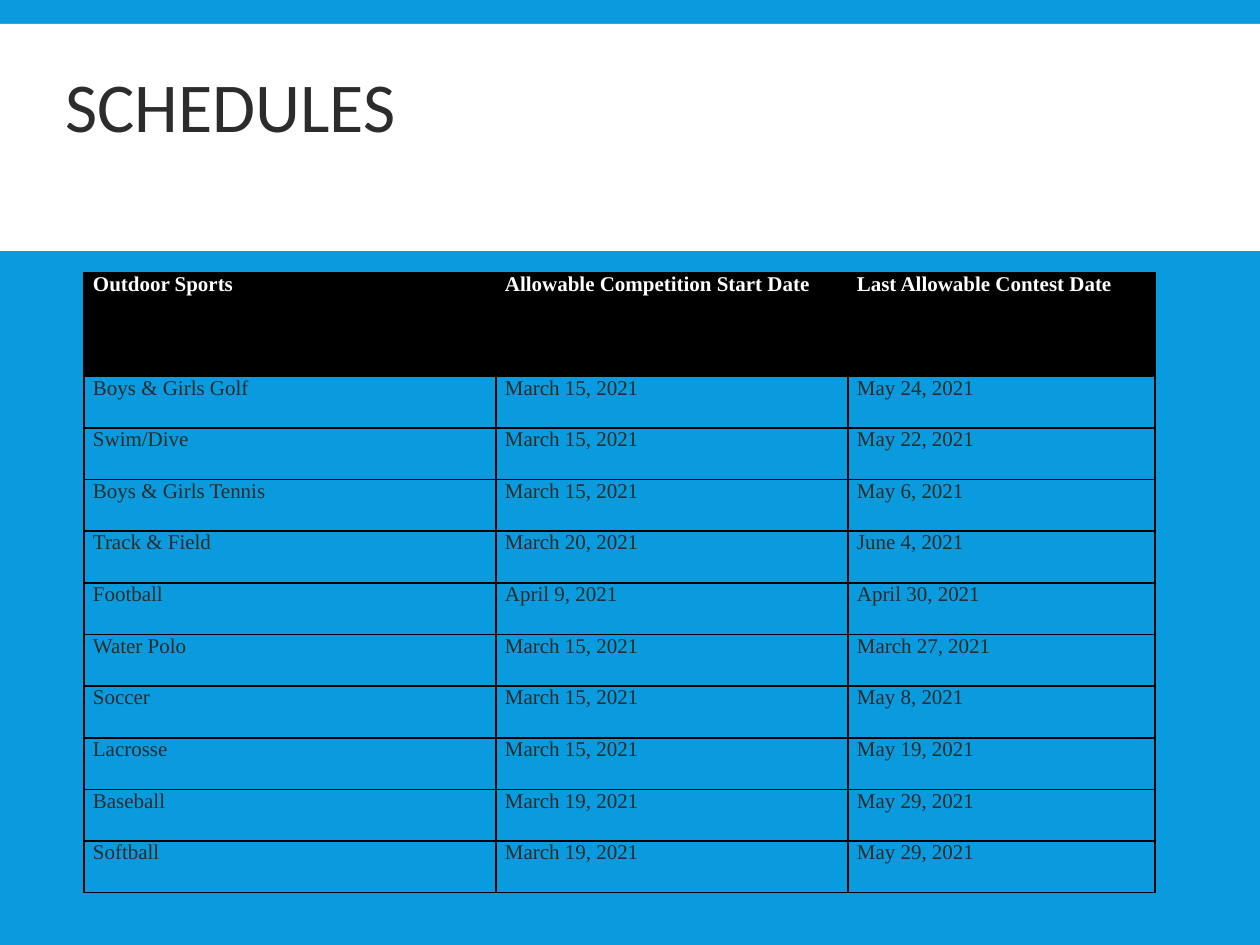
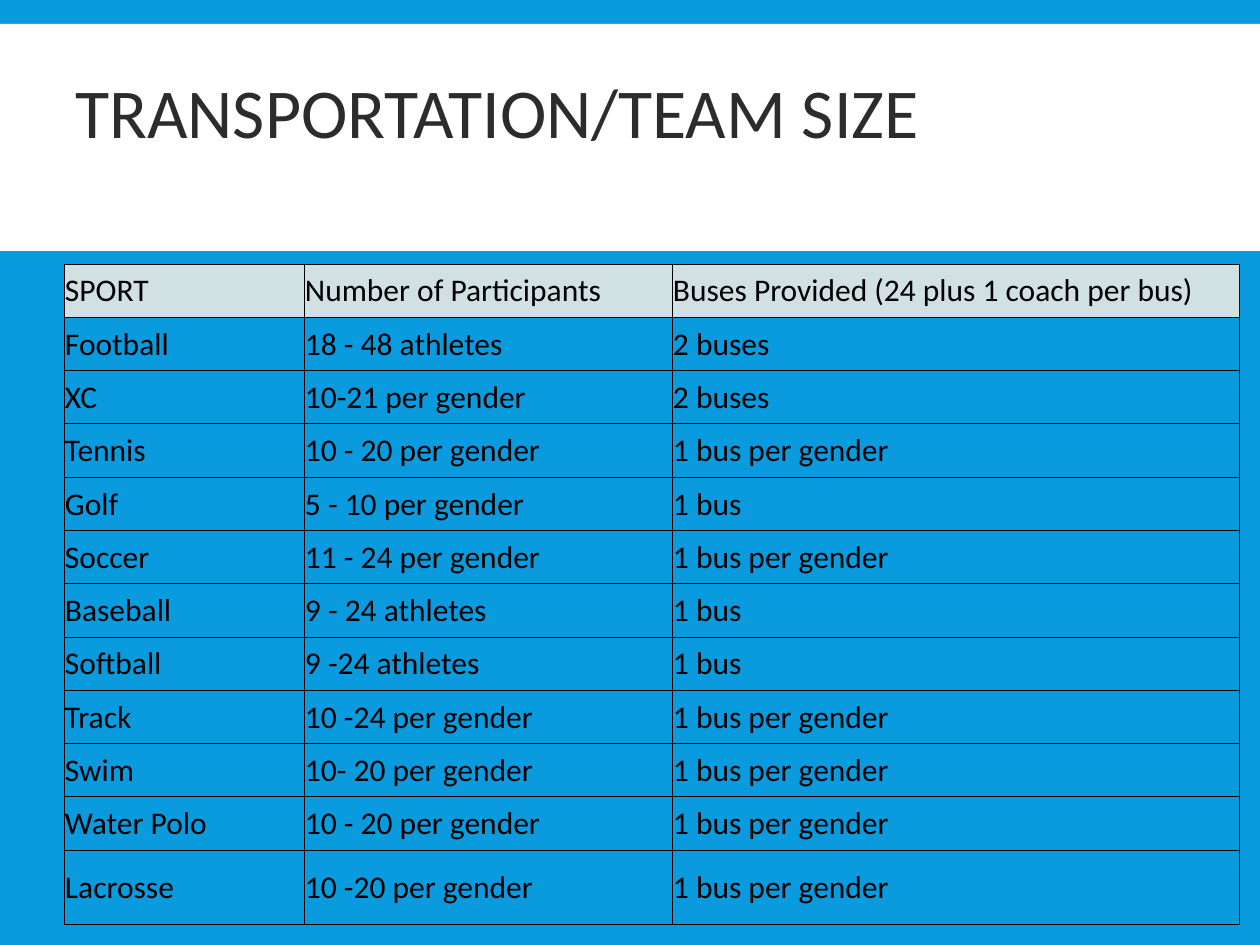
"""Build two slides on sports schedules and team transportation."""
from lxml import etree
from pptx import Presentation, util as u
from pptx.dml.color import RGBColor
from pptx.enum import shapes, text
from pptx.oxml.ns import qn

HUES = {"sky": "099BDD", "white": "FFFFFF", "ink": "2C2C2C",
        "black": "000000", "mist": "D0E0E3"}
SIZE = (1260, 945)
BAND = (0, 24, 1260, 227)
TITLE = {"name": "Calibri", "size": u.Pt(40), "bold": False}

DATES = [
    ("Outdoor Sports", "Allowable Competition Start Date", "Last Allowable Contest Date"),
    ("Boys & Girls Golf", "March 15, 2021", "May 24, 2021"),
    ("Swim/Dive", "March 15, 2021", "May 22, 2021"),
    ("Boys & Girls Tennis", "March 15, 2021", "May 6, 2021"),
    ("Track & Field", "March 20, 2021", "June 4, 2021"),
    ("Football", "April 9, 2021", "April 30, 2021"),
    ("Water Polo", "March 15, 2021", "March 27, 2021"),
    ("Soccer", "March 15, 2021", "May 8, 2021"),
    ("Lacrosse", "March 15, 2021", "May 19, 2021"),
    ("Baseball", "March 19, 2021", "May 29, 2021"),
    ("Softball", "March 19, 2021", "May 29, 2021"),
]
BUSES = [
    ("SPORT", "Number of Participants", "Buses Provided (24 plus 1 coach per bus)"),
    ("Football", "18 - 48 athletes", "2 buses"),
    ("XC", "10-21 per gender", "2 buses"),
    ("Tennis", "10 - 20 per gender", "1 bus per gender"),
    ("Golf", "5 - 10 per gender", "1 bus"),
    ("Soccer", "11 - 24 per gender", "1 bus per gender"),
    ("Baseball", "9 - 24 athletes", "1 bus"),
    ("Softball", "9 -24 athletes", "1 bus"),
    ("Track", "10 -24 per gender", "1 bus per gender"),
    ("Swim", "10- 20 per gender", "1 bus per gender"),
    ("Water Polo", "10 - 20 per gender", "1 bus per gender"),
    ("Lacrosse", "10 -20 per gender", "1 bus per gender"),
]
SLIDES = [
    {"title": "SCHEDULES", "box": (53, 32, 1134, 158),
     "rows": DATES, "at": (84, 273), "cols": (412, 352, 307), "high": 620,
     "parts": [2] + [1] * 10, "pads": (9, 0, 9, 0), "rule": 1,
     "anchor": text.MSO_ANCHOR.TOP, "fill": "black",
     "head": {"name": "Times New Roman", "size": u.Pt(12), "bold": True},
     "body": {"name": "Times New Roman", "size": u.Pt(12), "bold": False},
     "tints": ("white", "ink")},
    {"title": "TRANSPORTATION/TEAM SIZE", "box": (63, 38, 1134, 158),
     "rows": BUSES, "at": (64, 264), "cols": (240, 368, 567), "high": 661,
     "parts": [5] * 11 + [7], "pads": (1, 1, 1, 0), "rule": 0.5,
     "anchor": text.MSO_ANCHOR.MIDDLE, "fill": "mist",
     "head": {"name": "Calibri", "size": u.Pt(18), "bold": False},
     "body": {"name": "Calibri", "size": u.Pt(18), "bold": False},
     "tints": ("black", "black")},
]


def px(n):
    return u.Emu(round(n * 914400 / 126))


def hue(key):
    return RGBColor.from_string(HUES[key])


def style(font, look, tint):
    for key, val in look.items():
        setattr(font, key, val)
    font.color.rgb = hue(tint)


def paint(fill, key):
    fill.solid()
    fill.fore_color.rgb = hue(key)


def add_band(slide):
    band = slide.shapes.add_shape(shapes.MSO_SHAPE.RECTANGLE, *map(px, BAND))
    band.shadow.inherit = False
    paint(band.fill, "white")
    band.line.fill.background()


def add_title(slide, item):
    frame = slide.shapes.add_textbox(*map(px, item["box"])).text_frame
    frame.word_wrap = True
    frame.vertical_anchor = text.MSO_ANCHOR.MIDDLE
    para = frame.paragraphs[0]
    para.line_spacing = 0.85
    run = para.add_run()
    run.text = item["title"]
    style(run.font, TITLE, "ink")


def add_rules(cell, width):
    props = cell._tc.get_or_add_tcPr()
    for side in ("lnL", "lnR", "lnT", "lnB"):
        line = etree.SubElement(props, qn("a:" + side), w=str(u.Pt(width)))
        fill = etree.SubElement(line, qn("a:solidFill"))
        etree.SubElement(fill, qn("a:srgbClr"), val=HUES["black"])


def fill_cell(cell, words, item, top):
    for side, pad in zip(("left", "top", "right", "bottom"), item["pads"]):
        setattr(cell, "margin_" + side, px(pad))
    cell.vertical_anchor = item["anchor"]
    add_rules(cell, item["rule"])
    if top:
        paint(cell.fill, item["fill"])
    else:
        cell.fill.background()
    run = cell.text_frame.paragraphs[0].add_run()
    run.text = words
    style(run.font, item["head" if top else "body"], item["tints"][0 if top else 1])


def add_grid(slide, item):
    rows, cols, parts = item["rows"], item["cols"], item["parts"]
    area = (*item["at"], sum(cols), item["high"])
    grid = slide.shapes.add_table(len(rows), len(cols), *map(px, area)).table
    grid.horz_banding = False
    for col, wide in zip(grid.columns, cols):
        col.width = px(wide)
    for row, part in zip(grid.rows, parts):
        row.height = px(item["high"] * part / sum(parts))
    for r, row in enumerate(rows):
        for c, words in enumerate(row):
            fill_cell(grid.cell(r, c), words, item, r == 0)


def main():
    deck = Presentation()
    deck.slide_width, deck.slide_height = map(px, SIZE)
    for item in SLIDES:
        slide = deck.slides.add_slide(deck.slide_layouts[6])
        paint(slide.background.fill, "sky")
        add_band(slide)
        add_title(slide, item)
        add_grid(slide, item)
    deck.save("out.pptx")


if __name__ == "__main__":
    main()
